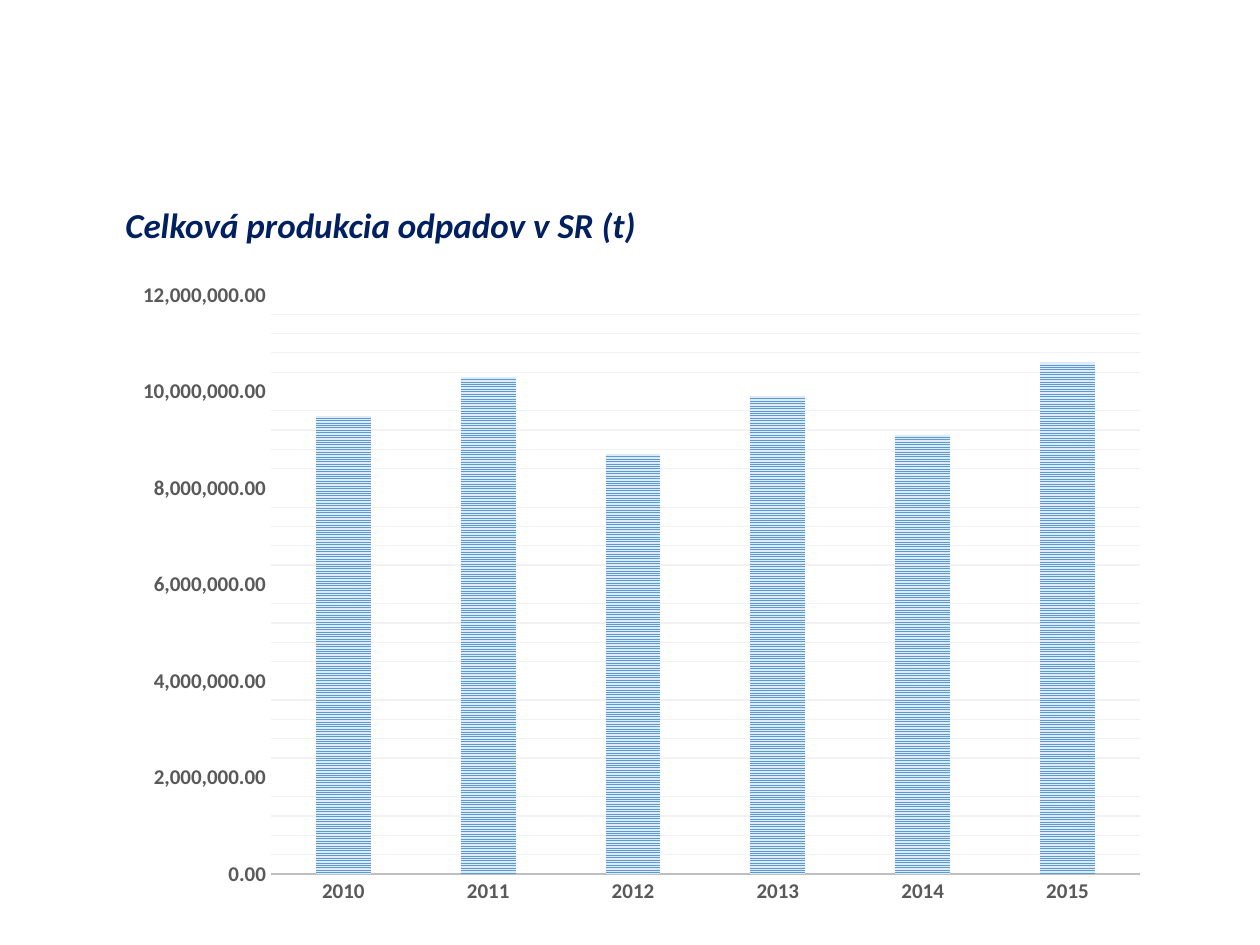
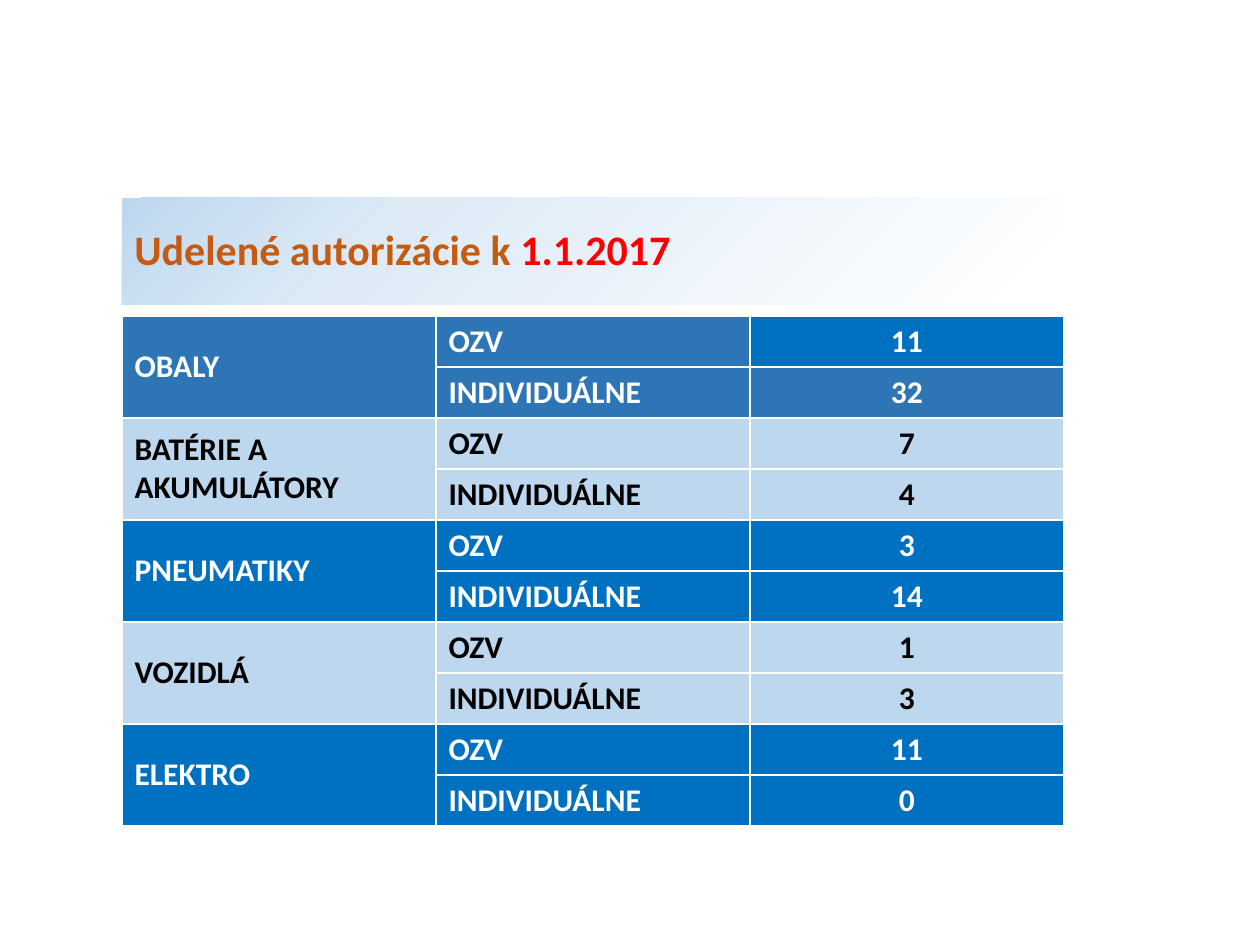
from lxml import etree
from pptx import Presentation, util as u
from pptx.chart import data as chart_data
from pptx.dml import color
from pptx.enum import chart as charts, dml, shapes, text
from pptx.oxml import ns

SCALE = u.Inches(1) / 126
WHITE, BLACK = "FFFFFF", "000000"
NAVY, ORANGE, RED = "002060", "C55A11", "FF0000"
STEEL, BLUE, SKY, ICE = "2E75B6", "0070C0", "BDD7EE", "DEEBF7"
AXIS_TEXT, AXIS_LINE, GRID, BAR = "595959", "BFBFBF", "F2F2F2", "5B9BD5"


def px(length):
    return u.Emu(round(length * SCALE))


def rgb(value):
    return color.RGBColor.from_string(value)


def apply(target, values):
    for key, value in values.items():
        setattr(target, key, value)


def child(parent, tag, **attributes):
    return etree.SubElement(parent, ns.qn(tag), attributes)


def outline(parent, tag, tone, width):
    line = child(parent, tag, w=str(u.Pt(width)))
    child(child(line, "a:solidFill"), "a:srgbClr", val=tone)


class Deck:
    font = "Calibri"

    def __init__(self, width, height):
        self.prs = Presentation()
        apply(self.prs, {"slide_width": px(width), "slide_height": px(height)})
        self.slide = None

    def new_slide(self):
        self.slide = self.prs.slides.add_slide(self.prs.slide_layouts[6])

    def style(self, font, size, ink, **extra):
        apply(font, {"name": self.font, "size": u.Pt(size), "bold": True, **extra})
        font.color.rgb = rgb(ink)

    def heading(self, frame, pieces, size, **extra):
        apply(frame, {"word_wrap": True, "vertical_anchor": text.MSO_ANCHOR.MIDDLE})
        line = frame.paragraphs[0]
        apply(line, {"line_spacing": 0.9, "alignment": text.PP_ALIGN.LEFT})
        for words, ink in pieces:
            run = line.add_run()
            run.text = words
            self.style(run.font, size, ink, **extra)

    def title(self, box, pieces, size, **extra):
        self.heading(self.slide.shapes.add_textbox(*map(px, box)).text_frame,
                     pieces, size, **extra)

    def banner(self, box, pieces, size, stops):
        band = self.slide.shapes.add_shape(shapes.MSO_SHAPE.RECTANGLE, *map(px, box))
        band.shadow.inherit = False
        band.line.fill.background()
        gradient = etree.Element(ns.qn("a:gradFill"), rotWithShape="1")
        stop_list = child(gradient, "a:gsLst")
        for position, tone in stops:
            stop = child(stop_list, "a:gs", pos=str(position * 1000))
            child(stop, "a:srgbClr", val=tone)
        focus = child(gradient, "a:path", path="circle")
        child(focus, "a:fillToRect", l="100000", t="100000")
        band.element.spPr.find(ns.qn("a:prstGeom")).addnext(gradient)
        self.heading(band.text_frame, pieces, size)

    def column_chart(self, box, plot_box, years, tonnes):
        data = chart_data.CategoryChartData(number_format="#,##0.00")
        data.categories = years
        data.add_series("Series 1", tonnes)
        chart = self.slide.shapes.add_chart(
            charts.XL_CHART_TYPE.COLUMN_CLUSTERED, *map(px, box), data).chart
        apply(chart, {"has_legend": False, "has_title": False})
        self.style(chart.font, 10, BLACK, bold=False)
        plot = chart.plots[0]
        apply(plot, {"gap_width": 164, "overlap": -22, "vary_by_categories": False})
        bars = plot.series[0].format.fill
        bars.patterned()
        bars.pattern = dml.MSO_PATTERN.NARROW_HORIZONTAL
        bars.fore_color.rgb, bars.back_color.rgb = rgb(BAR), rgb(ICE)

        year_axis, tonne_axis = chart.category_axis, chart.value_axis
        for axis in (year_axis, tonne_axis):
            apply(axis, {"major_tick_mark": charts.XL_TICK_MARK.NONE,
                         "minor_tick_mark": charts.XL_TICK_MARK.NONE,
                         "has_major_gridlines": False})
            self.style(axis.tick_labels.font, 12, AXIS_TEXT)
        apply(tonne_axis, {"minimum_scale": 0, "maximum_scale": 12_000_000,
                           "major_unit": 2_000_000, "minor_unit": 400_000,
                           "has_minor_gridlines": True})
        apply(tonne_axis.tick_labels, {"number_format": "#,##0.00",
                                       "number_format_is_linked": False})
        tonne_axis.format.line.fill.background()
        year_axis.format.line.color.rgb = rgb(AXIS_LINE)
        year_axis.format.line.width = u.Pt(1.5)
        gridlines = tonne_axis._element.find(ns.qn("c:minorGridlines"))
        outline(child(gridlines, "c:spPr"), "a:ln", GRID, 0.75)
        self.place_plot(chart, box, plot_box)

    def place_plot(self, chart, box, plot_box):
        area = chart._element.find(f".//{ns.qn('c:plotArea')}")
        for old in area.findall(ns.qn("c:layout")):
            area.remove(old)
        layout = etree.Element(ns.qn("c:layout"))
        area.insert(0, layout)
        manual = child(layout, "c:manualLayout")
        child(manual, "c:layoutTarget", val="inner")
        for side in "xy":
            child(manual, f"c:{side}Mode", val="edge")
        left, top, width, height = box
        x, y, w, h = plot_box
        for side, share in zip("xywh", ((x - left) / width, (y - top) / height,
                                        w / width, h / height)):
            child(manual, f"c:{side}", val=f"{share:.4f}")

    def table(self, left, top, column_width, row_height, rows, columns):
        grid = self.slide.shapes.add_table(
            rows, columns, px(left), px(top),
            px(column_width * columns), px(row_height * rows)).table
        apply(grid, {"first_row": False, "horz_banding": False})
        for column in grid.columns:
            column.width = px(column_width)
        for row in grid.rows:
            row.height = px(row_height)
        return grid

    def cell(self, cell, words, fill, ink, align=text.PP_ALIGN.LEFT,
             anchor=text.MSO_ANCHOR.TOP):
        cell.text = words
        cell.vertical_anchor = anchor
        line = cell.text_frame.paragraphs[0]
        line.alignment = align
        if words:
            self.style(line.runs[0].font, 18, ink)
        properties = cell._tc.get_or_add_tcPr()
        for side in "LRTB":
            outline(properties, f"a:ln{side}", WHITE, 1)
        cell.fill.solid()
        cell.fill.fore_color.rgb = rgb(fill)


def waste_production(deck):
    deck.new_slide()
    deck.column_chart(
        (122, 270, 1038, 648), (271, 295, 869, 579),
        ["2010", "2011", "2012", "2013", "2014", "2015"],
        [9_500_000, 10_300_000, 8_700_000, 9_900_000, 9_100_000, 10_600_000])
    deck.title((113, 200, 853, 54), [("Celková produkcia odpadov v SR (t)", NAVY)],
               20, italic=True)


def authorisations(deck):
    deck.new_slide()
    deck.banner((122, 198, 943, 107),
                [("Udelené autorizácie k ", ORANGE), ("1.1.2017", RED)], 24,
                [(3, WHITE), (71, ICE), (100, SKY)])
    streams = [("OBALY", 11, 32, STEEL, WHITE),
               ("BATÉRIE A AKUMULÁTORY", 7, 4, SKY, BLACK),
               ("PNEUMATIKY", 3, 14, BLUE, WHITE),
               ("VOZIDLÁ", 1, 3, SKY, BLACK),
               ("ELEKTRO", 11, 0, BLUE, WHITE)]
    grid = deck.table(122, 316, 314, 51, 2 * len(streams), 3)
    for index, (stream, collective, individual, fill, ink) in enumerate(streams):
        first = 2 * index
        holders = (("OZV", collective), ("INDIVIDUÁLNE", individual))
        for row, (holder, count) in enumerate(holders, first):
            deck.cell(grid.cell(row, 0), stream if row == first else "", fill, ink,
                      anchor=text.MSO_ANCHOR.MIDDLE)
            deck.cell(grid.cell(row, 1), holder, fill, ink)
            deck.cell(grid.cell(row, 2), str(count), BLUE if row == 0 else fill, ink,
                      align=text.PP_ALIGN.CENTER)
        grid.cell(first, 0).merge(grid.cell(first + 1, 0))


def main():
    deck = Deck(1260, 945)
    waste_production(deck)
    authorisations(deck)
    deck.prs.save("out.pptx")


if __name__ == "__main__":
    main()
